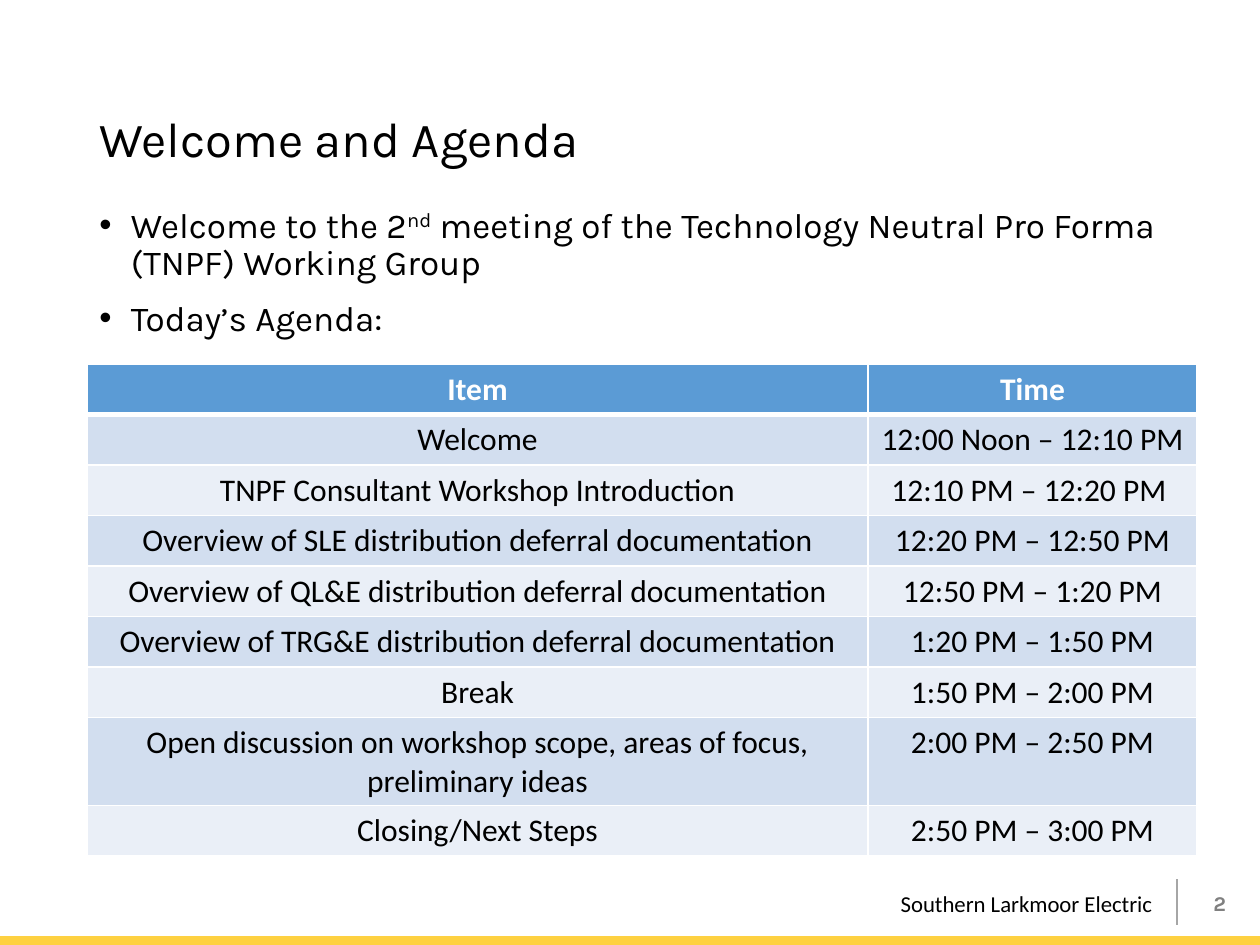
from lxml import etree
from pptx import Presentation
from pptx.dml.color import RGBColor
from pptx.enum.shapes import MSO_CONNECTOR, MSO_SHAPE
from pptx.enum.text import MSO_ANCHOR, PP_ALIGN
from pptx.oxml.ns import qn
from pptx.util import Inches, Pt

LEFT, CENTER, RIGHT = PP_ALIGN.LEFT, PP_ALIGN.CENTER, PP_ALIGN.RIGHT
TOP, MIDDLE = MSO_ANCHOR.TOP, MSO_ANCHOR.MIDDLE
LINE, RECT = MSO_CONNECTOR.STRAIGHT, MSO_SHAPE.RECTANGLE

BLACK = RGBColor(0x00, 0x00, 0x00)
WHITE = RGBColor(0xFF, 0xFF, 0xFF)
GRAY = RGBColor(0x80, 0x80, 0x80)
RULE = RGBColor(0xA6, 0xA6, 0xA6)
GOLD = RGBColor(0xFE, 0xD1, 0x41)
HEAD = RGBColor(0x5B, 0x9B, 0xD5)
BANDS = (RGBColor(0xEA, 0xEF, 0xF7), RGBColor(0xD2, 0xDE, 0xEF))

TITLE_FONT = {"name": "Karla", "size": Pt(28)}
BODY_FONT = {"name": "Karla", "size": Pt(20)}
FOOTER_FONT = {"name": "Calibri", "size": Pt(13)}
NUMBER_FONT = {"name": "Karla", "size": Pt(12), "bold": True}
CELL_FONT = {"name": "Calibri", "size": Pt(18)}

BULLETS = [
    [("Welcome to the 2", 0), ("nd", 30),
     (" meeting of the Technology Neutral Pro Forma (TNPF) Working Group", 0)],
    [("Today’s Agenda:", 0)],
]
AGENDA = [
    ("Item", "Time"),
    ("Welcome", "12:00 Noon – 12:10 PM"),
    ("TNPF Consultant Workshop Introduction", "12:10 PM – 12:20 PM "),
    ("Overview of SLE distribution deferral documentation", "12:20 PM – 12:50 PM"),
    ("Overview of QL&E distribution deferral documentation", "12:50 PM – 1:20 PM"),
    ("Overview of TRG&E distribution deferral documentation", "1:20 PM – 1:50 PM"),
    ("Break", "1:50 PM – 2:00 PM"),
    ("Open discussion on workshop scope, areas of focus, preliminary ideas",
     "2:00 PM – 2:50 PM"),
    ("Closing/Next Steps", "2:50 PM – 3:00 PM"),
]
COL_WIDTHS = (6.2, 2.61)
ROW_HEIGHT = 0.4


def add_run(p, text, fmt, color=BLACK, base=0):
    r = p.add_run()
    r.text = text
    for key, value in fmt.items():
        setattr(r.font, key, value)
    r.font.color.rgb = color
    if base:
        r._r.get_or_add_rPr().set("baseline", str(base * 1000))


def add_box(s, box, anchor=TOP):
    tf = s.shapes.add_textbox(*map(Inches, box)).text_frame
    tf.word_wrap = True
    tf.vertical_anchor = anchor
    return tf


def add_label(s, box, text, fmt, color=BLACK, align=LEFT, anchor=TOP):
    p = add_box(s, box, anchor).paragraphs[0]
    p.alignment = align
    add_run(p, text, fmt, color)
    return p


def add_bullets(s, box):
    tf = add_box(s, box)
    for i, runs in enumerate(BULLETS):
        p = tf.add_paragraph() if i else tf.paragraphs[0]
        p.line_spacing = 0.9
        p.space_before = Pt(10)
        pPr = p._p.get_or_add_pPr()
        pPr.set("marL", str(Inches(0.25)))
        pPr.set("indent", str(-Inches(0.25)))
        etree.SubElement(pPr, qn("a:buFont")).set("typeface", "Arial")
        etree.SubElement(pPr, qn("a:buChar")).set("char", "•")
        for text, base in runs:
            add_run(p, text, BODY_FONT, base=base)


def set_borders(cell, widths):
    tcPr = cell._tc.get_or_add_tcPr()
    for side, width in widths.items():
        ln = etree.SubElement(tcPr, qn("a:ln" + side), w=str(Pt(width)))
        fill = etree.SubElement(ln, qn("a:solidFill"))
        etree.SubElement(fill, qn("a:srgbClr")).set("val", str(WHITE))


def add_agenda(s, left, top):
    size = (sum(COL_WIDTHS), ROW_HEIGHT * len(AGENDA))
    table = s.shapes.add_table(len(AGENDA), len(COL_WIDTHS),
                               *map(Inches, (left, top) + size)).table
    for col, width in zip(table.columns, COL_WIDTHS):
        col.width = Inches(width)
    for i, texts in enumerate(AGENDA):
        table.rows[i].height = Inches(ROW_HEIGHT)
        for j, text in enumerate(texts):
            cell = table.cell(i, j)
            set_borders(cell, {"L": 1, "R": 1, "T": 3 if i == 1 else 1,
                               "B": 1 if i else 3})
            cell.fill.solid()
            cell.fill.fore_color.rgb = BANDS[i % 2] if i else HEAD
            p = cell.text_frame.paragraphs[0]
            p.alignment = CENTER
            add_run(p, text, {**CELL_FONT, "bold": i == 0}, BLACK if i else WHITE)


def add_footer(s):
    rule = s.shapes.add_connector(LINE, *map(Inches, (9.34, 6.98, 9.34, 7.34)))
    rule.line.color.rgb = RULE
    rule.line.width = Pt(1)
    etree.SubElement(rule._element.spPr, qn("a:effectLst"))
    bar = s.shapes.add_shape(RECT, *map(Inches, (0, 7.43, 10, 0.07)))
    bar.shadow.inherit = False
    bar.fill.solid()
    bar.fill.fore_color.rgb = GOLD
    bar.line.fill.background()
    add_label(s, (6.67, 7.01, 2.57, 0.32), "Southern Larkmoor Electric",
              FOOTER_FONT, align=RIGHT)
    add_label(s, (9.27, 6.97, 0.56, 0.4), "2", NUMBER_FONT, GRAY, RIGHT, MIDDLE)


def main():
    prs = Presentation()
    prs.slide_width, prs.slide_height = Inches(10), Inches(7.5)
    s = prs.slides.add_slide(prs.slide_layouts[6])
    add_footer(s)
    title = add_label(s, (0.69, 0.4, 8.62, 1.45), "Welcome and Agenda",
                      TITLE_FONT, anchor=MIDDLE)
    title.line_spacing = 0.9
    add_bullets(s, (0.69, 1.6, 8.62, 1.29))
    add_agenda(s, 0.69, 2.89)
    prs.save("out.pptx")


if __name__ == "__main__":
    main()
